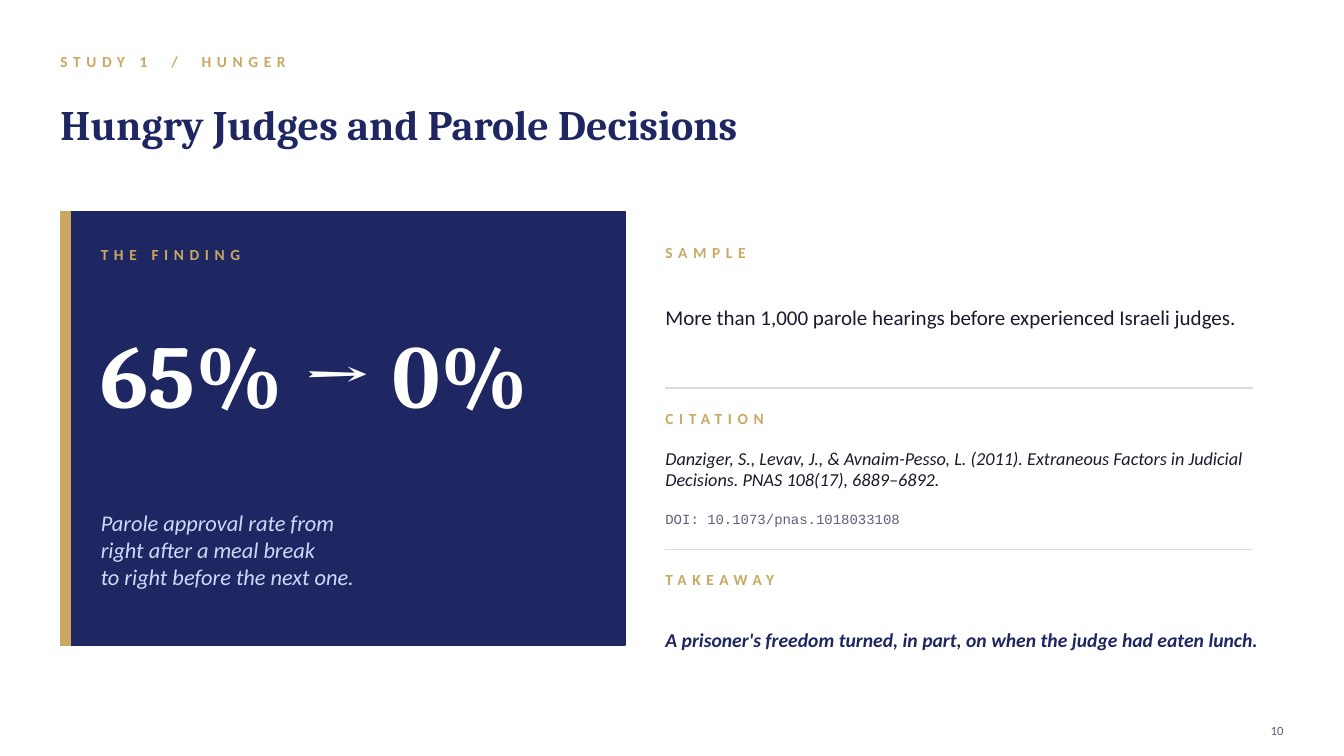
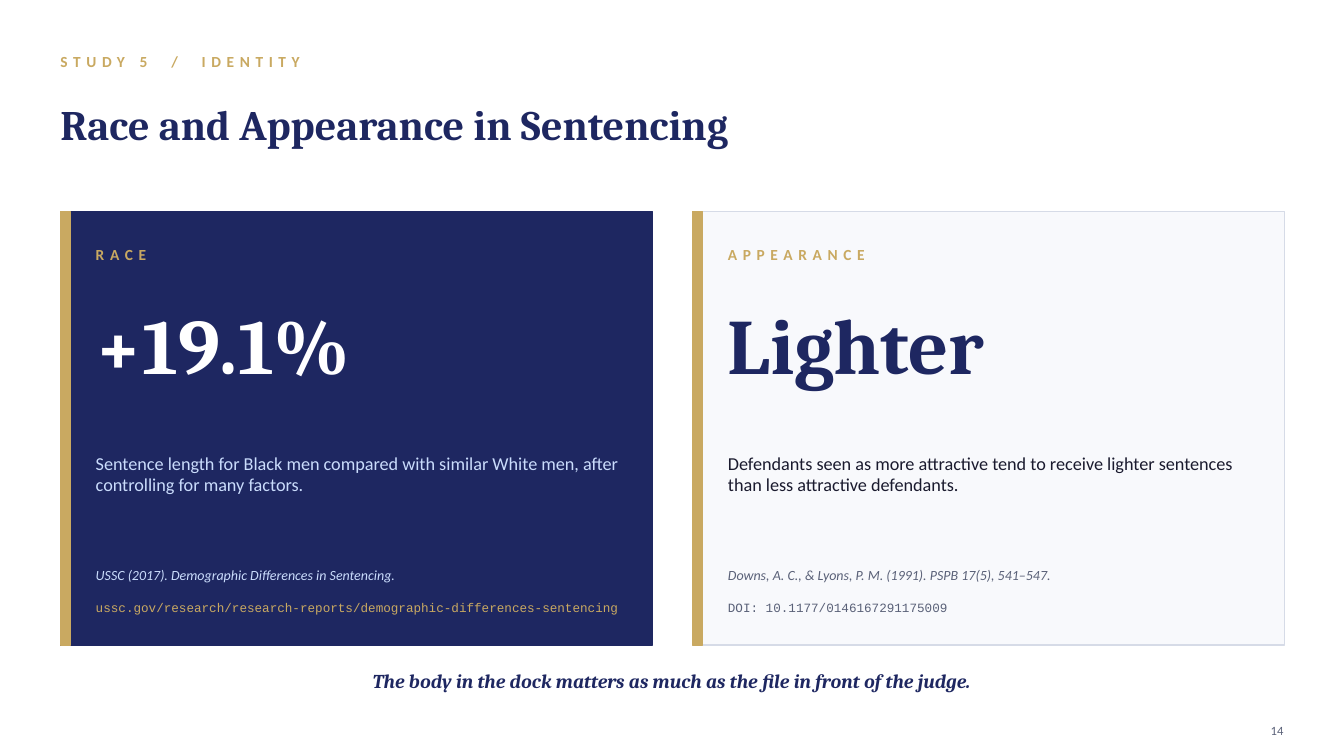
from typing import NamedTuple

from lxml import etree
from pptx import Presentation
from pptx.dml.color import RGBColor
from pptx.enum.shapes import MSO_CONNECTOR, MSO_SHAPE
from pptx.enum.text import MSO_ANCHOR, MSO_AUTO_SIZE, PP_ALIGN
from pptx.oxml.ns import qn
from pptx.util import Inches, Pt

RECTANGLE = MSO_SHAPE.RECTANGLE
STRAIGHT = MSO_CONNECTOR.STRAIGHT
MIDDLE = MSO_ANCHOR.MIDDLE
NO_AUTOFIT = MSO_AUTO_SIZE.NONE
LEFT, CENTER, RIGHT = PP_ALIGN.LEFT, PP_ALIGN.CENTER, PP_ALIGN.RIGHT

NAVY = RGBColor(0x1E, 0x27, 0x61)
GOLD = RGBColor(0xC9, 0xA9, 0x61)
ICE = RGBColor(0xCA, 0xDC, 0xFC)
INK = RGBColor(0x1A, 0x1A, 0x2E)
SLATE = RGBColor(0x5A, 0x61, 0x78)
RULE = RGBColor(0xD6, 0xDB, 0xE7)
MIST = RGBColor(0xF8, 0xF9, 0xFC)
WHITE = RGBColor(0xFF, 0xFF, 0xFF)

SANS, SERIF, MONO = "Calibri", "Cambria", "Courier New"

MARGIN = 0.6
CONTENT_WIDTH = 12.13
CARD_TOP, CARD_HEIGHT = 2.1, 4.3
COLUMN_GAP = 0.4
TITLE_ONLY_LAYOUT = 5


class Style(NamedTuple):
    size: float
    color: RGBColor
    font: str = SANS
    bold: bool = False
    italic: bool = False
    tracking: float = 0


LABEL = Style(11, GOLD, bold=True, tracking=4)
TITLE = Style(30, NAVY, SERIF, bold=True)
PAGE_NUMBER = Style(9, SLATE)


class Deck:
    """Holds the presentation, its shared look and the slide being built."""

    def __init__(self):
        self.presentation = Presentation()
        self.presentation.slide_width = Inches(13.33)
        self.presentation.slide_height = Inches(7.5)
        self.slide = None

    def new_slide(self, study, title, page):
        layout = self.presentation.slide_layouts[TITLE_ONLY_LAYOUT]
        self.slide = self.presentation.slides.add_slide(layout)
        self.text(study, MARGIN, 0.45, CONTENT_WIDTH, 0.32, LABEL)
        heading = self.slide.shapes.title
        heading.left, heading.top = Inches(MARGIN), Inches(0.78)
        heading.width, heading.height = Inches(CONTENT_WIDTH), Inches(0.9)
        self.fill_frame(heading.text_frame, title, TITLE)
        self.text(page, 12.23, 7.1, 0.5, 0.3, PAGE_NUMBER, RIGHT)

    def fill_frame(self, frame, content, style, align=LEFT):
        """Fill a text frame, one paragraph per line of content."""
        frame.text = content
        frame.word_wrap = True
        frame.auto_size = NO_AUTOFIT
        frame.vertical_anchor = MIDDLE
        frame.margin_left = frame.margin_right = 0
        frame.margin_top = frame.margin_bottom = 0
        for paragraph in frame.paragraphs:
            paragraph.alignment = align
            font = paragraph.font
            font.name, font.size = style.font, Pt(style.size)
            font.bold, font.italic = style.bold, style.italic
            font.color.rgb = style.color
            if style.tracking:
                for run in paragraph.runs:
                    properties = run._r.get_or_add_rPr()
                    properties.set("spc", str(int(style.tracking * 100)))

    def text(self, content, left, top, width, height, style, align=LEFT):
        box = self.slide.shapes.add_textbox(
            Inches(left), Inches(top), Inches(width), Inches(height))
        self.fill_frame(box.text_frame, content, style, align)

    def block(self, left, width, fill, outline):
        rectangle = self.slide.shapes.add_shape(
            RECTANGLE, Inches(left), Inches(CARD_TOP),
            Inches(width), Inches(CARD_HEIGHT))
        rectangle.shadow.inherit = False
        rectangle.fill.solid()
        rectangle.fill.fore_color.rgb = fill
        rectangle.line.color.rgb = outline
        rectangle.line.width = Pt(1)

    def card(self, left, width, fill, outline):
        """Draw a panel with a gold band on its left edge."""
        self.block(left, width, fill, outline)
        self.block(left, 0.1, GOLD, GOLD)

    def divider(self, left, top, width):
        line = self.slide.shapes.add_connector(
            STRAIGHT, Inches(left), Inches(top),
            Inches(left + width), Inches(top))
        line.line.color.rgb = RULE
        line.line.width = Pt(1)
        etree.SubElement(line._element.spPr, qn("a:effectLst"))


def build_hungry_judges(deck):
    deck.new_slide("STUDY 1  /  HUNGER", "Hungry Judges and Parole Decisions", "10")

    deck.card(MARGIN, 5.6, NAVY, NAVY)
    finding = [
        ("THE FINDING", 2.35, 0.35, LABEL),
        ("65% → 0%", 2.8, 1.8, Style(64, WHITE, SERIF, bold=True)),
        ("Parole approval rate from\nright after a meal break\n"
         "to right before the next one.", 4.7, 1.5, Style(16, ICE, italic=True)),
    ]
    for content, top, height, style in finding:
        deck.text(content, MARGIN + 0.4, top, 5, height, style)

    details_left = MARGIN + 5.6 + COLUMN_GAP
    details = [
        ("SAMPLE", 2.35, 0.3, LABEL),
        ("More than 1,000 parole hearings before experienced Israeli judges.",
         2.65, 1, Style(15, INK)),
        ("CITATION", 4, 0.3, LABEL),
        ("Danziger, S., Levav, J., & Avnaim-Pesso, L. (2011). Extraneous Factors "
         "in Judicial Decisions. PNAS 108(17), 6889–6892.",
         4.3, 0.7, Style(13, INK, italic=True)),
        ("DOI: 10.1073/pnas.1018033108", 5, 0.3, Style(10, SLATE, MONO)),
        ("TAKEAWAY", 5.6, 0.3, LABEL),
        ("A prisoner's freedom turned, in part, on when the judge had eaten lunch.",
         5.9, 0.9, Style(14, NAVY, bold=True, italic=True)),
    ]
    for content, top, height, style in details:
        deck.text(content, details_left, top, 6.13, height, style)
    for top in (3.85, 5.45):
        deck.divider(details_left, top, 5.83)


def build_race_and_appearance(deck):
    deck.new_slide("STUDY 5  /  IDENTITY", "Race and Appearance in Sentencing", "14")

    card_width = 5.87
    rows = [(2.35, 0.35), (2.8, 1.2), (4.1, 1.2), (5.5, 0.4), (5.85, 0.35)]
    findings = [
        (NAVY, NAVY, [
            ("RACE", LABEL),
            ("+19.1%", Style(56, WHITE, SERIF, bold=True)),
            ("Sentence length for Black men compared with similar White men, "
             "after controlling for many factors.", Style(13, ICE)),
            ("USSC (2017). Demographic Differences in Sentencing.",
             Style(10, ICE, italic=True)),
            ("ussc.gov/research/research-reports/demographic-differences-sentencing",
             Style(9, GOLD, MONO)),
        ]),
        (MIST, RULE, [
            ("APPEARANCE", LABEL),
            ("Lighter", Style(56, NAVY, SERIF, bold=True)),
            ("Defendants seen as more attractive tend to receive lighter sentences "
             "than less attractive defendants.", Style(13, INK)),
            ("Downs, A. C., & Lyons, P. M. (1991). PSPB 17(5), 541–547.",
             Style(10, SLATE, italic=True)),
            ("DOI: 10.1177/0146167291175009", Style(9, SLATE, MONO)),
        ]),
    ]
    for column, (fill, outline, entries) in enumerate(findings):
        left = MARGIN + column * (card_width + COLUMN_GAP)
        deck.card(left, card_width, fill, outline)
        for (content, style), (top, height) in zip(entries, rows):
            deck.text(content, left + 0.35, top, card_width - 0.5, height, style)

    deck.text("The body in the dock matters as much as the file in front of the judge.",
              MARGIN, 6.55, CONTENT_WIDTH, 0.4,
              Style(14, NAVY, SERIF, bold=True, italic=True), CENTER)


def main():
    deck = Deck()
    build_hungry_judges(deck)
    build_race_and_appearance(deck)
    deck.presentation.save("out.pptx")


if __name__ == "__main__":
    main()
